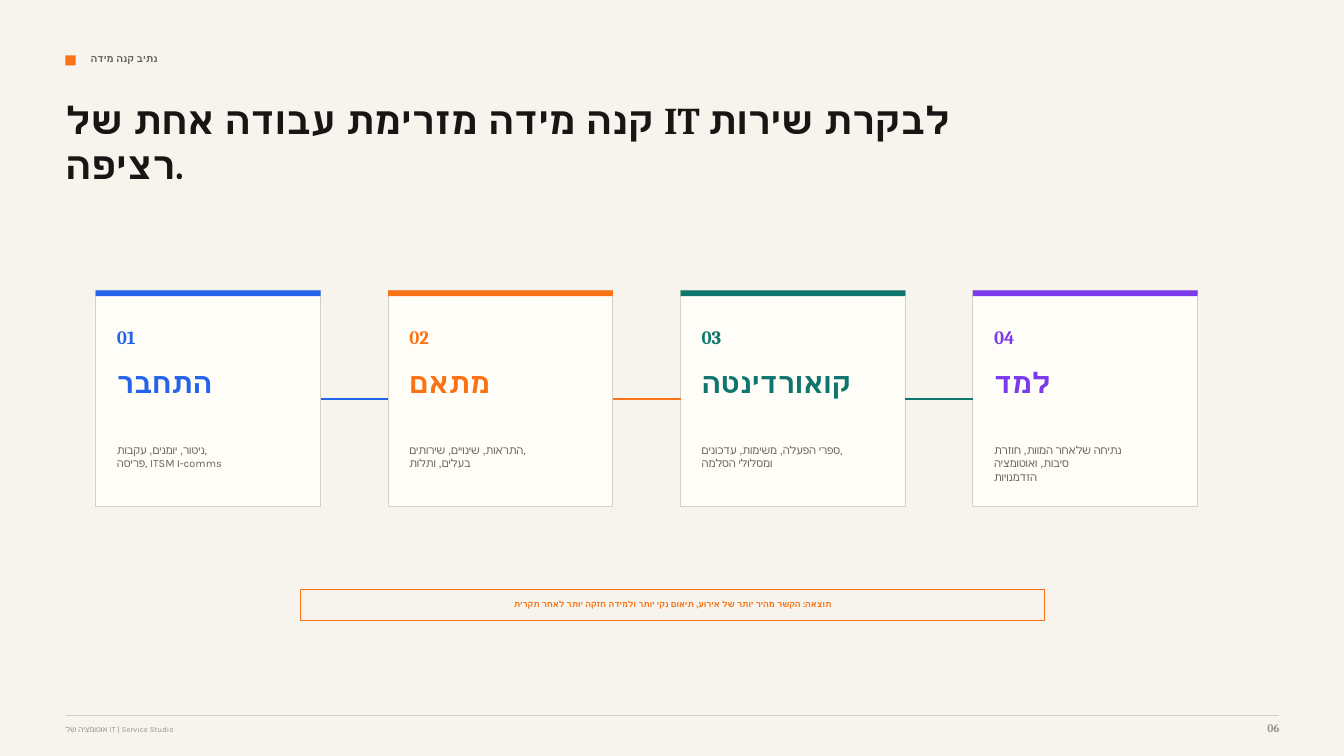
from lxml import etree
from pptx import Presentation
from pptx.dml.color import RGBColor
from pptx.enum.shapes import MSO_CONNECTOR as Connector, MSO_SHAPE as Shape
from pptx.enum.text import MSO_ANCHOR as Anchor, PP_ALIGN as Align
from pptx.oxml.ns import qn
from pptx.util import Inches, Pt

COLORS = {
    "paper": "F7F4EE", "card": "FFFDF8", "rule": "D9D0C3", "ink": "171614",
    "body": "69635A", "muted": "9A9184", "blue": "2563EB",
    "orange": "F97316", "green": "0F766E", "violet": "7C3AED",
}
SERIF, SANS = "Cambria", "Karla"
STEPS = [
    ("התחבר", "blue", ["ניטור, יומנים, עקבות,", "פריסה, ITSM ו-comms"]),
    ("מתאם", "orange", ["התראות, שינויים, שירותים,", "בעלים, ותלות"]),
    ("קואורדינטה", "green", ["ספרי הפעלה, משימות, עדכונים,", "ומסלולי הסלמה"]),
    ("למד", "violet", ["נתיחה שלאחר המוות, חוזרת", "סיבות, ואוטומציה", "הזדמנויות"]),
]


def color(name):
    """Return the named palette colour."""
    return RGBColor.from_string(COLORS[name])


def fill_text(box, lines, *, size, tint, font=SANS, bold=False, align=Align.LEFT, top=0):
    """Write lines as paragraphs into a shape with one format."""
    frame = box.text_frame
    frame.word_wrap = True
    frame.vertical_anchor = Anchor.TOP
    frame.margin_left = frame.margin_right = frame.margin_bottom = 0
    frame.margin_top = Inches(top)
    for index, line in enumerate(lines):
        para = frame.add_paragraph() if index else frame.paragraphs[0]
        para.alignment = align
        span = para.add_run()
        span.text = line
        span.font.name = font
        span.font.size = Pt(size)
        span.font.bold = bold
        span.font.color.rgb = color(tint)


def add_text(page, area, text, **style):
    """Add a text box at the area given in inches."""
    lines = [text] if isinstance(text, str) else text
    fill_text(page.shapes.add_textbox(*map(Inches, area)), lines, **style)


def add_rect(page, area, fill=None, line=None):
    """Add a flat rectangle with an optional fill and outline."""
    rect = page.shapes.add_shape(Shape.RECTANGLE, *map(Inches, area))
    rect.shadow.inherit = False
    if fill:
        rect.fill.solid()
        rect.fill.fore_color.rgb = color(fill)
    else:
        rect.fill.background()
    if line:
        rect.line.color.rgb = color(line)
        rect.line.width = Pt(0.75)
    else:
        rect.line.fill.background()
    return rect


def add_line(page, start, end, tint, width):
    """Add a straight line between two points in inches."""
    line = page.shapes.add_connector(Connector.STRAIGHT, *map(Inches, (*start, *end)))
    line.line.color.rgb = color(tint)
    line.line.width = Pt(width)
    etree.SubElement(line._element.spPr, qn("a:effectLst"))
    return line


def add_header(page, left, top, width):
    """Place the marker, section label and title."""
    add_rect(page, (left, top + 0.03, 0.1, 0.1), fill="orange")
    add_text(page, (left + 0.25, top, 6.46, 0.19), "נתיב קנה מידה",
             size=7.1, tint="body", bold=True)
    add_text(page, (left, top + 0.44, width, 1.02),
             "קנה מידה מזרימת עבודה אחת של IT לבקרת שירות רציפה.",
             size=27, tint="ink", font=SERIF, bold=True)


def add_card(page, left, top, width, height, number, step):
    """Place one step card and return its frame."""
    name, tint, details = step
    card = add_rect(page, (left, top, width, height), fill="card", line="rule")
    add_rect(page, (left, top, width, 0.06), fill=tint)
    inner = left + 0.21
    heading = {"tint": tint, "font": SERIF, "bold": True}
    add_text(page, (inner, top + 0.35, 0.46, 0.25), f"{number:02}", size=13.5, **heading)
    add_text(page, (inner, top + 0.74, 1.67, 0.46), name, size=20.2, **heading)
    add_text(page, (inner, top + 1.52, 1.73, 0.46), details, size=7.9, tint="body")
    return card


def add_steps(page, left, top, pitch, width, height):
    """Place the row of cards and join neighbours in the earlier card's colour."""
    cards = [add_card(page, left + index * pitch, top, width, height, index + 1, step)
             for index, step in enumerate(STEPS)]
    middle = top + height / 2
    for index, (card, following) in enumerate(zip(cards, cards[1:])):
        start = left + index * pitch + width
        link = add_line(page, (start, middle), (left + (index + 1) * pitch, middle),
                        STEPS[index][1], 1.5)
        link.begin_connect(card, 3)
        link.end_connect(following, 1)


def add_result(page, left, top, width, height):
    """Place the outlined result statement."""
    box = add_rect(page, (left, top, width, height), line="orange")
    fill_text(box, ["תוצאה: הקשר מהיר יותר של אירוע, תיאום נקי יותר ולמידה חזקה יותר לאחר תקרית"],
              size=6, tint="orange", bold=True, align=Align.CENTER, top=0.09)


def add_footer(page, left, top, width):
    """Place the footer rule, caption and page number."""
    add_line(page, (left, top), (left + width, top), "rule", 0.75)
    add_text(page, (left, top + 0.09, 7.92, 0.15), "אוטומציה של IT | Service Studio",
             size=5.6, tint="muted")
    add_text(page, (left + width - 0.5, top + 0.05, 0.5, 0.19), "06",
             size=8.2, tint="muted", font=SERIF, bold=True, align=Align.RIGHT)


def main():
    """Build and save the scaling path slide."""
    deck = Presentation()
    deck.slide_width, deck.slide_height = Inches(13.33), Inches(7.5)
    page = deck.slides.add_slide(deck.slide_layouts[6])
    page.background.fill.solid()
    page.background.fill.fore_color.rgb = color("paper")
    add_header(page, 0.65, 0.52, 9.9)
    add_steps(page, 0.95, 2.88, 2.9, 2.23, 2.15)
    add_result(page, 2.98, 5.85, 7.38, 0.31)
    add_footer(page, 0.65, 7.1, 12.04)
    deck.save("out.pptx")


if __name__ == "__main__":
    main()
